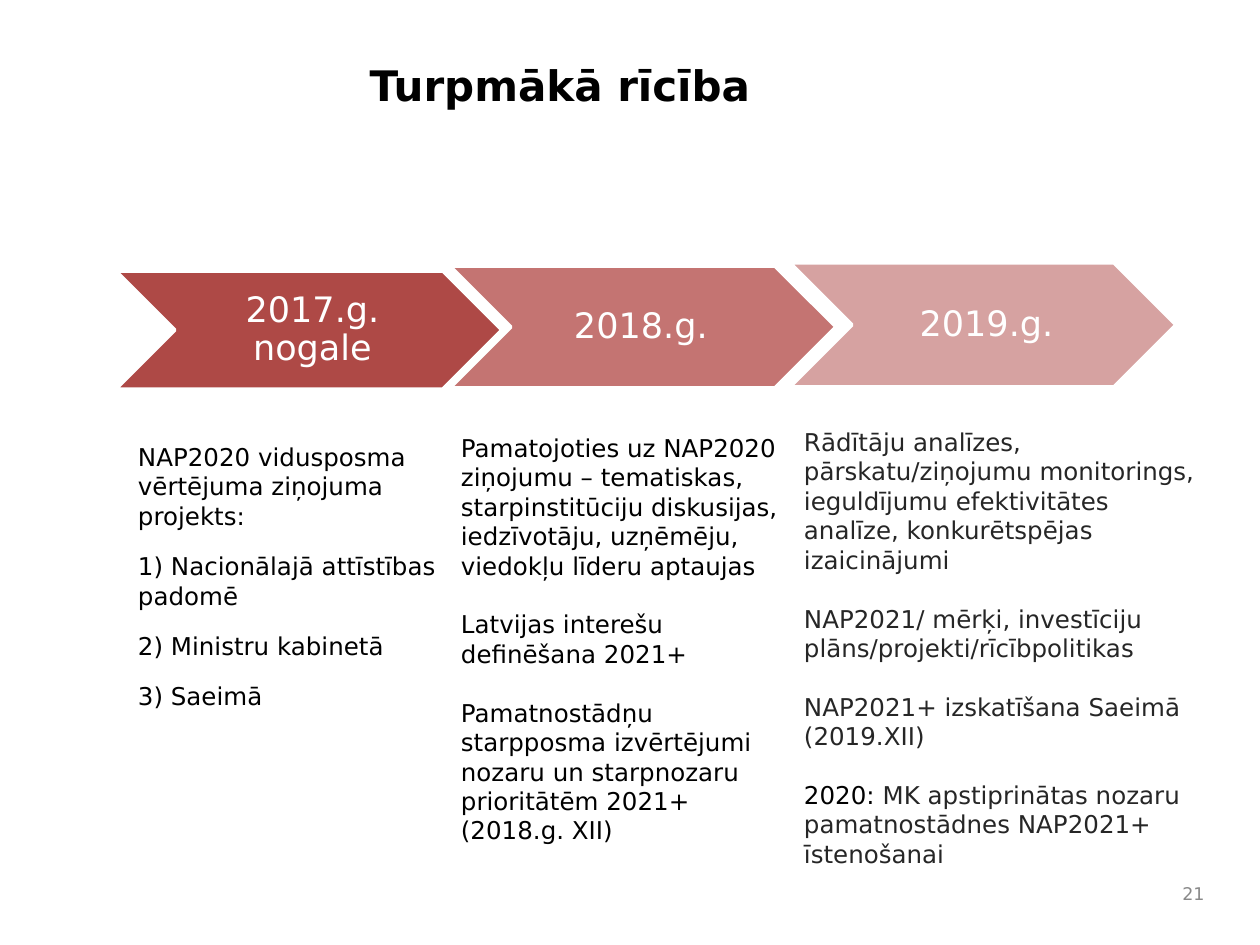
from dataclasses import dataclass

from pptx import Presentation
from pptx.dml.color import RGBColor
from pptx.enum.shapes import MSO_SHAPE
from pptx.enum.text import MSO_ANCHOR, PP_ALIGN
from pptx.util import Pt

PX = 914400 / 126  # EMU per px


@dataclass(frozen=True)
class Theme:
    font: str = "DejaVu Sans"
    black: str = "000000"
    dark: str = "262626"
    grey: str = "898989"
    white: str = "FFFFFF"
    steps: tuple = ("AE4946", "C47472", "D6A2A1")
    title: int = 24
    label: int = 20
    body: int = 14
    number: int = 10


theme = Theme()


def box(*lengths):
    return [round(n * PX) for n in lengths]


def style(p, size, color, bold=False):
    for r in p.runs:
        r.font.name = theme.font
        r.font.size = Pt(size)
        r.font.bold = bold
        r.font.color.rgb = RGBColor.from_string(color)


prs = Presentation()
prs.slide_width, prs.slide_height = box(1260, 945)
slide = prs.slides.add_slide(prs.slide_layouts[5])

# Title
title = slide.shapes.title
title.left, title.top, title.width, title.height = box(357, 53, 840, 142)
tf = title.text_frame
tf.text = "Turpmākā rīcība"
tf.vertical_anchor = MSO_ANCHOR.TOP
tf.paragraphs[0].alignment = PP_ALIGN.LEFT
style(tf.paragraphs[0], theme.title, theme.black, bold=True)

# Slide number
tf = slide.shapes.add_textbox(*box(1147, 872, 70, 42)).text_frame
tf.text = "21"
tf.vertical_anchor = MSO_ANCHOR.MIDDLE
tf.paragraphs[0].alignment = PP_ALIGN.RIGHT
style(tf.paragraphs[0], theme.number, theme.grey)

# Timeline chevrons: label, left, top, height
steps = [
    ("2017.g. nogale", 116, 271, 118),
    ("2018.g. ", 450, 266, 122),
    ("2019.g.", 790, 263, 124),
]
for (label, left, top, height), color in zip(steps, theme.steps):
    sp = slide.shapes.add_shape(MSO_SHAPE.CHEVRON, *box(left, top, 386, height))
    sp.shadow.inherit = False
    sp.fill.solid()
    sp.fill.fore_color.rgb = RGBColor.from_string(color)
    sp.line.color.rgb = RGBColor.from_string(theme.white)
    sp.line.width = Pt(2)
    tf = sp.text_frame
    tf.word_wrap = True
    tf.vertical_anchor = MSO_ANCHOR.MIDDLE
    tf.margin_left, tf.margin_top, tf.margin_right, tf.margin_bottom = box(11, 4, 4, 4)
    tf.text = label
    p = tf.paragraphs[0]
    p.alignment = PP_ALIGN.CENTER
    p.line_spacing = 0.9
    style(p, theme.label, theme.white)

# Text columns: place, gap between paragraphs in points, colour, paragraphs
columns = [
    ((138, 442, 304, 430), 12, theme.black, [
        "NAP2020 vidusposma vērtējuma ziņojuma projekts:",
        "1) Nacionālajā attīstības padomē",
        "2) Ministru kabinetā",
        "3) Saeimā",
    ]),
    ((461, 433, 326, 416), 16.8, theme.black, [
        "Pamatojoties uz NAP2020 ziņojumu – tematiskas, starpinstitūciju "
        "diskusijas, iedzīvotāju, uzņēmēju, viedokļu līderu aptaujas",
        "Latvijas interešu definēšana 2021+",
        "Pamatnostādņu starpposma izvērtējumi nozaru un starpnozaru "
        "prioritātēm 2021+ (2018.g. XII)",
    ]),
    ((804, 427, 391, 446), 16.8, theme.dark, [
        "Rādītāju analīzes, pārskatu/ziņojumu monitorings, ieguldījumu "
        "efektivitātes analīze, konkurētspējas izaicinājumi",
        "NAP2021/ mērķi, investīciju plāns/projekti/rīcībpolitikas",
        "NAP2021+ izskatīšana Saeimā (2019.XII)",
        "2020: ",
    ]),
]
for place, gap, color, paragraphs in columns:
    tf = slide.shapes.add_textbox(*box(*place)).text_frame
    tf.word_wrap = True
    tf.margin_left = tf.margin_top = tf.margin_right = tf.margin_bottom = 0
    tf.text = "\n".join(paragraphs)
    for i, p in enumerate(tf.paragraphs):
        p.space_before = Pt(gap if i else 0)
        style(p, theme.body, color)

# The last paragraph opens with a black year
p = tf.paragraphs[-1]
p.add_run().text = "MK apstiprinātas nozaru pamatnostādnes NAP2021+ īstenošanai"
style(p, theme.body, theme.dark)
p.runs[0].font.color.rgb = RGBColor.from_string(theme.black)

prs.save("out.pptx")
